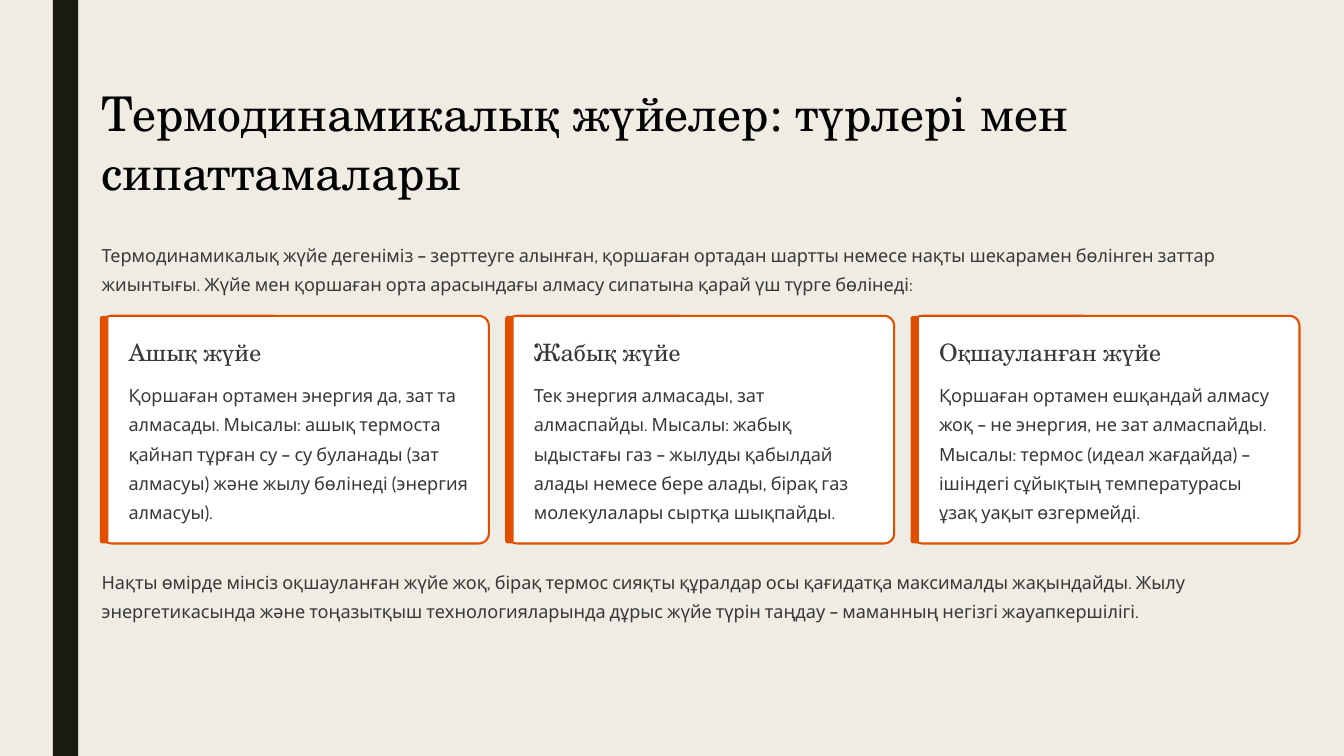
from pptx import Presentation
from pptx.dml.color import RGBColor
from pptx.enum.shapes import MSO_SHAPE
from pptx.enum.text import MSO_ANCHOR, PP_ALIGN
from pptx.util import Inches, Pt

RECT, ROUND = MSO_SHAPE.RECTANGLE, MSO_SHAPE.ROUNDED_RECTANGLE
TOP, LEFT_ALIGN = MSO_ANCHOR.TOP, PP_ALIGN.LEFT

# Content
TITLE = "Термодинамикалық жүйелер: түрлері мен сипаттамалары"
INTRO = (
    "Термодинамикалық жүйе дегеніміз – зерттеуге алынған, қоршаған ортадан "
    "шартты немесе нақты шекарамен бөлінген заттар жиынтығы. Жүйе мен қоршаған "
    "орта арасындағы алмасу сипатына қарай үш түрге бөлінеді:"
)
SYSTEMS = [
    ("Ашық жүйе",
     "Қоршаған ортамен энергия да, зат та алмасады. Мысалы: ашық термоста "
     "қайнап тұрған су – су буланады (зат алмасуы) және жылу бөлінеді "
     "(энергия алмасуы)."),
    ("Жабық жүйе",
     "Тек энергия алмасады, зат алмаспайды. Мысалы: жабық ыдыстағы газ – "
     "жылуды қабылдай алады немесе бере алады, бірақ газ молекулалары сыртқа "
     "шықпайды."),
    ("Оқшауланған жүйе",
     "Қоршаған ортамен ешқандай алмасу жоқ – не энергия, не зат алмаспайды. "
     "Мысалы: термос (идеал жағдайда) – ішіндегі сұйықтың температурасы ұзақ "
     "уақыт өзгермейді."),
]
SUMMARY = (
    "Нақты өмірде мінсіз оқшауланған жүйе жоқ, бірақ термос сияқты құралдар "
    "осы қағидатқа максималды жақындайды. Жылу энергетикасында және тоңазытқыш "
    "технологияларында дұрыс жүйе түрін таңдау – маманның негізгі "
    "жауапкершілігі."
)

# Style: font, size, line spacing, colour
TITLE_STYLE = ("TeX Gyre Schola", 41, 51, "020202")
HEAD_STYLE = ("TeX Gyre Schola", 20.5, 25.5, "383838")
BODY_STYLE = ("Cabin", 15.5, 25, "383838")
PAPER, DARK, WHITE, ORANGE = "EFEDE3", "191B0E", "FFFFFF", "E04F00"

# Layout in inches
LEFT, WIDTH = 1.21, 14.26
CARD_TOP, CARD_W, CARD_H = 3.76, 4.61, 2.71
CARD_STEP = (WIDTH - CARD_W) / (len(SYSTEMS) - 1)


def color(hex_code):
    return RGBColor.from_string(hex_code)


def add_box(slide, kind, x, y, w, h, fill, line=None, radius=None):
    sp = slide.shapes.add_shape(kind, Inches(x), Inches(y), Inches(w), Inches(h))
    sp.shadow.inherit = False
    sp.fill.solid()
    sp.fill.fore_color.rgb = color(fill)
    if line:
        sp.line.color.rgb = color(line)
        sp.line.width = Pt(1.8)
    else:
        sp.line.fill.background()
    if radius is not None:
        sp.adjustments[0] = radius


def add_text(slide, text, x, y, w, h, style, wrap=True):
    font, size, spacing, ink = style
    sp = slide.shapes.add_textbox(Inches(x), Inches(y), Inches(w), Inches(h))
    tf = sp.text_frame
    tf.margin_left = tf.margin_right = tf.margin_top = tf.margin_bottom = 0
    tf.word_wrap = wrap
    tf.vertical_anchor = TOP
    p = tf.paragraphs[0]
    p.text = text
    p.alignment = LEFT_ALIGN
    p.line_spacing = Pt(spacing)
    r = p.runs[0]
    r.font.name = font
    r.font.size = Pt(size)
    r.font.color.rgb = color(ink)


def add_card(slide, x, heading, body):
    add_box(slide, ROUND, x, CARD_TOP, CARD_W, CARD_H, WHITE, ORANGE, 0.044)
    add_box(slide, ROUND, x - 0.02, CARD_TOP, 0.1, CARD_H, ORANGE, radius=0.326)
    add_text(slide, heading, x + 0.32, CARD_TOP + 0.25, 2.85, 0.36, HEAD_STYLE, False)
    add_text(slide, body, x + 0.32, CARD_TOP + 0.73, 4.05, 1.74, BODY_STYLE)


def main():
    prs = Presentation()
    prs.slide_width, prs.slide_height = Inches(16), Inches(9)
    slide = prs.slides.add_slide(prs.slide_layouts[6])
    slide.background.fill.solid()
    slide.background.fill.fore_color.rgb = color(PAPER)

    # Side band, title and introduction
    add_box(slide, RECT, 0.63, 0, 0.3, 9, DARK)
    add_text(slide, TITLE, LEFT, 0.97, WIDTH, 1.42, TITLE_STYLE)
    add_text(slide, INTRO, LEFT, 2.82, WIDTH, 0.69, BODY_STYLE)

    # One card for each kind of system
    for i, (heading, body) in enumerate(SYSTEMS):
        add_card(slide, LEFT + i * CARD_STEP, heading, body)

    # Closing paragraph
    add_text(slide, SUMMARY, LEFT, 6.71, WIDTH, 0.69, BODY_STYLE)
    prs.save("out.pptx")


if __name__ == "__main__":
    main()
